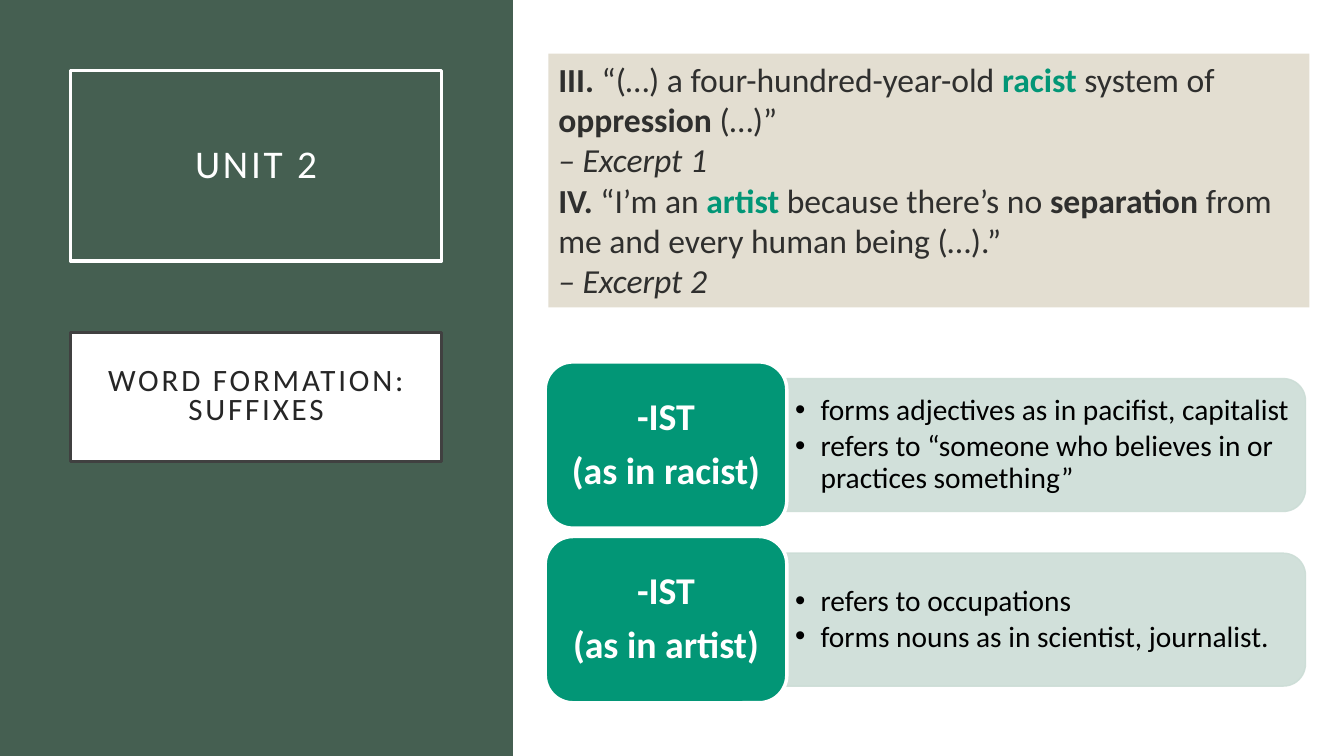
import pptx
import pptx.util
import pptx.dml.color
import pptx.enum.shapes
import pptx.enum.text
import pptx.oxml
import pptx.oxml.ns
import lxml.etree

Cm, Pt = pptx.util.Cm, pptx.util.Pt
SHAPE = pptx.enum.shapes.MSO_SHAPE
ANCHOR = pptx.enum.text.MSO_ANCHOR
CENTER = pptx.enum.text.PP_ALIGN.CENTER
LEFT = pptx.enum.text.PP_ALIGN.LEFT
rgb = pptx.dml.color.RGBColor.from_string

COLORS = {
    "forest": "455F51", "white": "FFFFFF", "frame": "404040", "heading": "262626",
    "sand": "E3DED1", "ink": "2F2F2E", "teal": "029676", "mint": "CCDDD6", "black": "000000",
}


def paint(shape, fill=None, line=None, width=2.5):
    """Give a shape its fill and outline; None means none."""
    if fill:
        shape.fill.solid()
        shape.fill.fore_color.rgb = rgb(COLORS[fill])
    else:
        shape.fill.background()
    if line:
        shape.line.color.rgb = rgb(COLORS[line])
        shape.line.width = Pt(width)
    else:
        shape.line.fill.background()


def write(shape, lines, size, color, align, spacing, after=0, bold=False, inset=(0.5, 0.5), tracking=0):
    """Fill a shape with vertically centred paragraphs in one style."""
    frame = shape.text_frame
    frame.text = "\n".join(lines)
    frame.word_wrap = True
    frame.auto_size = pptx.enum.text.MSO_AUTO_SIZE.NONE
    frame.vertical_anchor = ANCHOR.MIDDLE
    frame.margin_left = frame.margin_right = Cm(inset[0])
    frame.margin_top = frame.margin_bottom = Cm(inset[1])
    for paragraph in frame.paragraphs:
        paragraph.alignment = align
        paragraph.line_spacing = spacing
        paragraph.space_before = Pt(0)
        paragraph.space_after = Pt(after)
        for run in paragraph.runs:
            run.font.name = "Calibri"
            run.font.size = Pt(size)
            run.font.bold = bold
            run.font.color.rgb = rgb(COLORS[color])
            if tracking:
                run.font._element.set("spc", str(tracking * 100))


deck = pptx.Presentation()
deck.slide_width, deck.slide_height = Cm(33.87), Cm(19.05)
slide = deck.slides.add_slide(deck.slide_layouts[3])
shapes = slide.shapes
unit_title, *meaning_lists = slide.placeholders
layers = unit_title.element.getparent()

# Left panel with the unit title
panel = shapes.add_shape(SHAPE.RECTANGLE, 0, 0, Cm(12.93), deck.slide_height)
panel.shadow.inherit = False
paint(panel, "forest")

layers.append(unit_title.element)
unit_title.left, unit_title.top = Cm(1.78), Cm(1.78)
unit_title.width, unit_title.height = Cm(9.35), Cm(4.8)
paint(unit_title, line="white")
write(unit_title, ["UNIT 2"], 28, "white", CENTER, 0.9, tracking=2)

# Topic box
topic = shapes.add_shape(SHAPE.RECTANGLE, Cm(1.78), Cm(8.38), Cm(9.35), Cm(3.25))
topic.shadow.inherit = False
paint(topic, "white", "frame")
write(topic, ["WORD FORMATION:", "SUFFIXES"], 22.2, "heading", CENTER, 0.8, tracking=2)

# Quotations: each run is text and style (b bold, i italic, t bold teal)
QUOTES = [
    [("III. ", "b"), ("“(…) a four-hundred-year-old ", ""), ("racist", "t"),
     (" system of ", ""), ("oppression", "b"), (" (…)”", "")],
    [("– Excerpt 1", "i")],
    [("IV. ", "b"), ("“I’m an ", ""), ("artist", "t"), (" because there’s no ", ""),
     ("separation", "b"), (" from me and every human being (…).”", "")],
    [("– Excerpt 2", "i")],
]
quotes = shapes.add_shape(SHAPE.RECTANGLE, Cm(13.82), Cm(1.35), Cm(19.18), Cm(6.4))
quotes.shadow.inherit = False
paint(quotes, "sand")
quotes.text_frame.word_wrap = True
quotes.text_frame.vertical_anchor = ANCHOR.TOP
for number, pieces in enumerate(QUOTES):
    quote = quotes.text_frame.add_paragraph() if number else quotes.text_frame.paragraphs[0]
    quote.alignment = LEFT
    for words, style in pieces:
        run = quote.add_run()
        run.text = words
        run.font.name = "Calibri"
        run.font.size = Pt(24)
        run.font.bold = style in ("b", "t")
        run.font.italic = style == "i"
        run.font.color.rgb = rgb(COLORS["teal" if style == "t" else "ink"])

# Suffix rows: bar, list of meanings, label
SUFFIXES = [
    ("(as in racist)", ["forms adjectives as in pacifist, capitalist",
                        "refers to “someone who believes in or practices something”"]),
    ("(as in artist)", ["refers to occupations",
                        "forms nouns as in scientist, journalist."]),
]
ROW_TOP, ROW_STEP, LABEL_HEIGHT = 9.12, 4.4, 4.19
BAR_LEFT, BAR_LENGTH, BAR_HEIGHT = 19.82, 13.08, 3.35
for row, ((example, meanings), meaning_list) in enumerate(zip(SUFFIXES, meaning_lists)):
    top = ROW_TOP + row * ROW_STEP
    middle = top + LABEL_HEIGHT / 2

    # The bar is turned so that its rounded end points right
    bar = shapes.add_shape(SHAPE.ROUND_2_SAME_RECTANGLE,
                           Cm(BAR_LEFT + (BAR_LENGTH - BAR_HEIGHT) / 2), Cm(middle - BAR_LENGTH / 2),
                           Cm(BAR_HEIGHT), Cm(BAR_LENGTH))
    bar.rotation = 90
    bar.shadow.inherit = False
    paint(bar, "mint", "mint", 1)
    for color in bar.element.spPr.iter(pptx.oxml.ns.qn("a:srgbClr")):
        lxml.etree.SubElement(color, pptx.oxml.ns.qn("a:alpha"), val="90000")

    layers.append(meaning_list.element)
    meaning_list.left, meaning_list.top = Cm(19.82), Cm(middle - 1.51)
    meaning_list.width, meaning_list.height = Cm(12.98), Cm(3.02)
    write(meaning_list, meanings, 21, "black", LEFT, 0.9, after=3, inset=(0.22, 0.1))
    for paragraph in meaning_list.text_frame.paragraphs:
        properties = paragraph._p.get_or_add_pPr()
        properties.set("marL", str(Cm(0.64)))
        properties.set("indent", str(-Cm(0.64)))
        lxml.etree.SubElement(properties, pptx.oxml.ns.qn("a:buChar"), char="•")

    label = shapes.add_shape(SHAPE.ROUNDED_RECTANGLE, Cm(13.74), Cm(top), Cm(6.09), Cm(LABEL_HEIGHT))
    label.shadow.inherit = False
    paint(label, "teal", "white")
    write(label, ["-IST", example], 27, "white", CENTER, 0.9, after=9.45, bold=True, inset=(0.28, 0.15))

deck.save("out.pptx")
